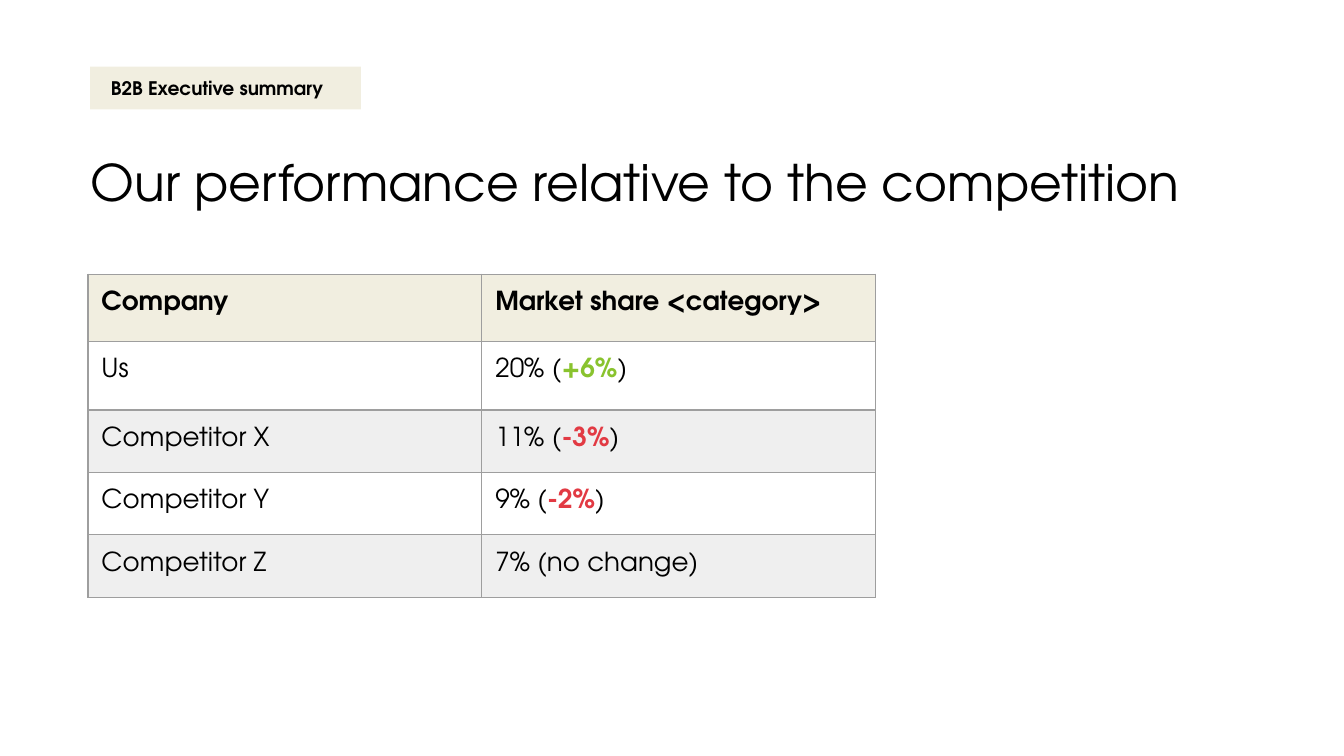
from lxml import etree
from pptx import Presentation
from pptx.dml.color import RGBColor
from pptx.enum.shapes import MSO_SHAPE
from pptx.enum.text import MSO_ANCHOR, MSO_AUTO_SIZE, PP_ALIGN
from pptx.oxml.ns import qn
from pptx.util import Emu, Pt

RECT = MSO_SHAPE.RECTANGLE
MIDDLE = MSO_ANCHOR.MIDDLE
TOP = MSO_ANCHOR.TOP
LEFT = PP_ALIGN.LEFT
NO_AUTOFIT = MSO_AUTO_SIZE.NONE

FONT = "TeX Gyre Adventor"
BLACK, CREAM, GRAY, BORDER = "000000", "F1EEE0", "EFEFEF", "9E9E9E"
GREEN, RED = "89C32E", "E23A43"

COLUMNS = [586, 586]
ROW_HEIGHTS = [100, 102, 93, 93, 93]
HEADERS = ["Company", "Market share <category>"]
SHARES = [
    ("Us", "20%", "+6%", GREEN),
    ("Competitor X", "11%", "-3%", RED),
    ("Competitor Y", "9%", "-2%", RED),
    ("Competitor Z", "7%", "no change", None),
]


def px(n):
    """Convert px, 200 to the inch, to EMU."""
    return Emu(n * 4572)


def rgb(color):
    return RGBColor.from_string(color)


def set_insets(frame, left, other):
    frame.margin_left = px(left)
    frame.margin_right = frame.margin_top = frame.margin_bottom = px(other)


def add_run(p, text, size, color=BLACK, bold=False):
    r = p.add_run()
    r.text = text
    r.font.name = FONT
    r.font.size = Pt(size)
    r.font.bold = bold
    r.font.color.rgb = rgb(color)


def add_badge(s, x, y, w, h, text):
    sp = s.shapes.add_shape(RECT, px(x), px(y), px(w), px(h))
    sp.shadow.inherit = False
    sp.fill.solid()
    sp.fill.fore_color.rgb = rgb(CREAM)
    sp.line.fill.background()
    tf = sp.text_frame
    tf.word_wrap = True
    tf.vertical_anchor = MIDDLE
    set_insets(tf, 31, 14)
    p = tf.paragraphs[0]
    p.alignment = LEFT
    add_run(p, text, 10, bold=True)


def set_title(s, x, y, w, h, text):
    sp = s.shapes.title
    sp.left, sp.top, sp.width, sp.height = px(x), px(y), px(w), px(h)
    tf = sp.text_frame
    tf.auto_size = NO_AUTOFIT
    tf.vertical_anchor = MIDDLE
    set_insets(tf, 14, 14)
    p = tf.paragraphs[0]
    p.alignment = LEFT
    add_run(p, text, 27)


def add_borders(cell):
    tc_pr = cell._tc.get_or_add_tcPr()
    for side in ("a:lnL", "a:lnR", "a:lnT", "a:lnB"):
        ln = etree.SubElement(tc_pr, qn(side), w=str(Pt(0.75)))
        fill = etree.SubElement(ln, qn("a:solidFill"))
        etree.SubElement(fill, qn("a:srgbClr"), val=BORDER)


def fill_cell(cell, runs, fill):
    """Write runs of (text, color, bold) into a bordered cell."""
    add_borders(cell)
    if fill:
        cell.fill.solid()
        cell.fill.fore_color.rgb = rgb(fill)
    else:
        cell.fill.background()
    cell.vertical_anchor = TOP
    set_insets(cell, 20, 20)
    p = cell.text_frame.paragraphs[0]
    p.line_spacing = 1.15
    for text, color, bold in runs:
        add_run(p, text, 14, color, bold)


def share_runs(share, change, color):
    if color is None:
        return [(f"{share} ({change})", BLACK, False)]
    return [(f"{share} (", BLACK, False), (change, color, True), (")", BLACK, False)]


def add_share_table(s, x, y):
    frame = s.shapes.add_table(len(ROW_HEIGHTS), len(COLUMNS), px(x), px(y),
                               px(sum(COLUMNS)), px(sum(ROW_HEIGHTS)))
    table = frame.table
    table.first_row = table.horz_banding = False
    for column, width in zip(table.columns, COLUMNS):
        column.width = px(width)
    for row, height in zip(table.rows, ROW_HEIGHTS):
        row.height = px(height)

    for col, header in enumerate(HEADERS):
        fill_cell(table.cell(0, col), [(header, BLACK, True)], CREAM)
    for row, (company, share, change, color) in enumerate(SHARES, start=1):
        fill = GRAY if row % 2 == 0 else None
        fill_cell(table.cell(row, 0), [(company, BLACK, False)], fill)
        fill_cell(table.cell(row, 1), share_runs(share, change, color), fill)


def main():
    prs = Presentation()
    prs.slide_width, prs.slide_height = px(2000), px(1125)
    s = prs.slides.add_slide(prs.slide_layouts.get_by_name("Title Only"))
    add_share_table(s, 131, 408)
    set_title(s, 121, 213, 1674, 114, "Our performance relative to the competition")
    add_badge(s, 134, 99, 403, 64, "B2B Executive summary")
    prs.save("out.pptx")


if __name__ == "__main__":
    main()
